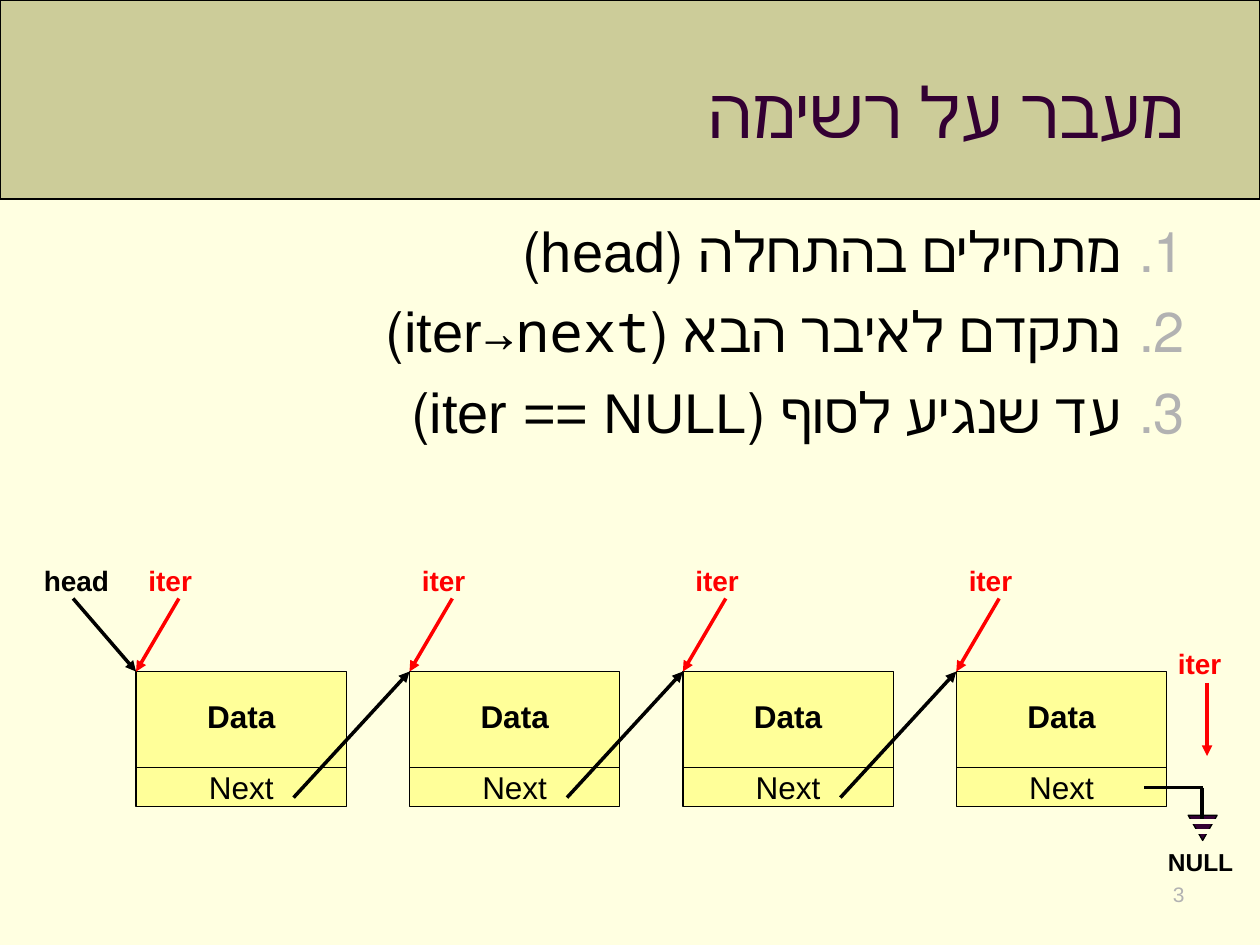
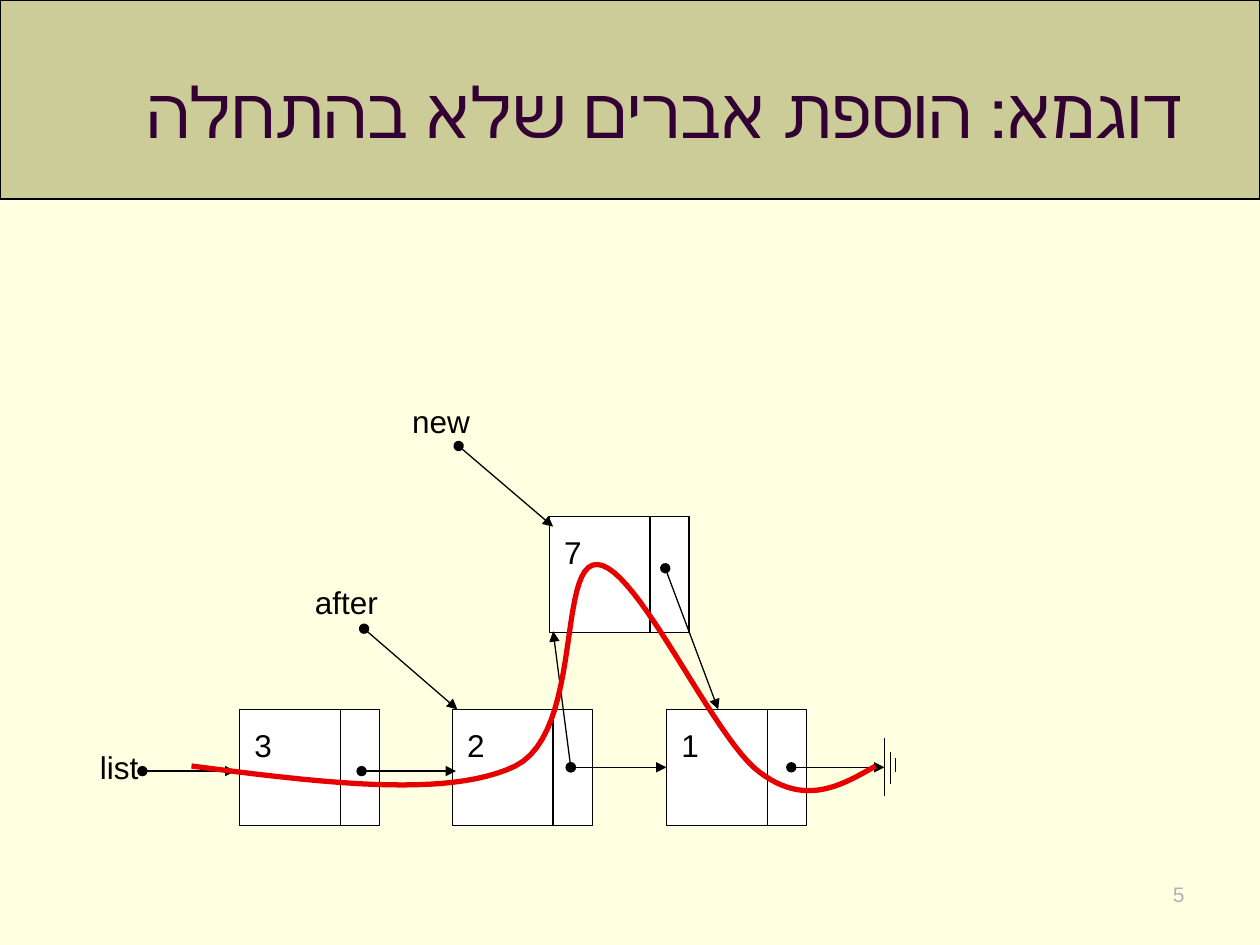
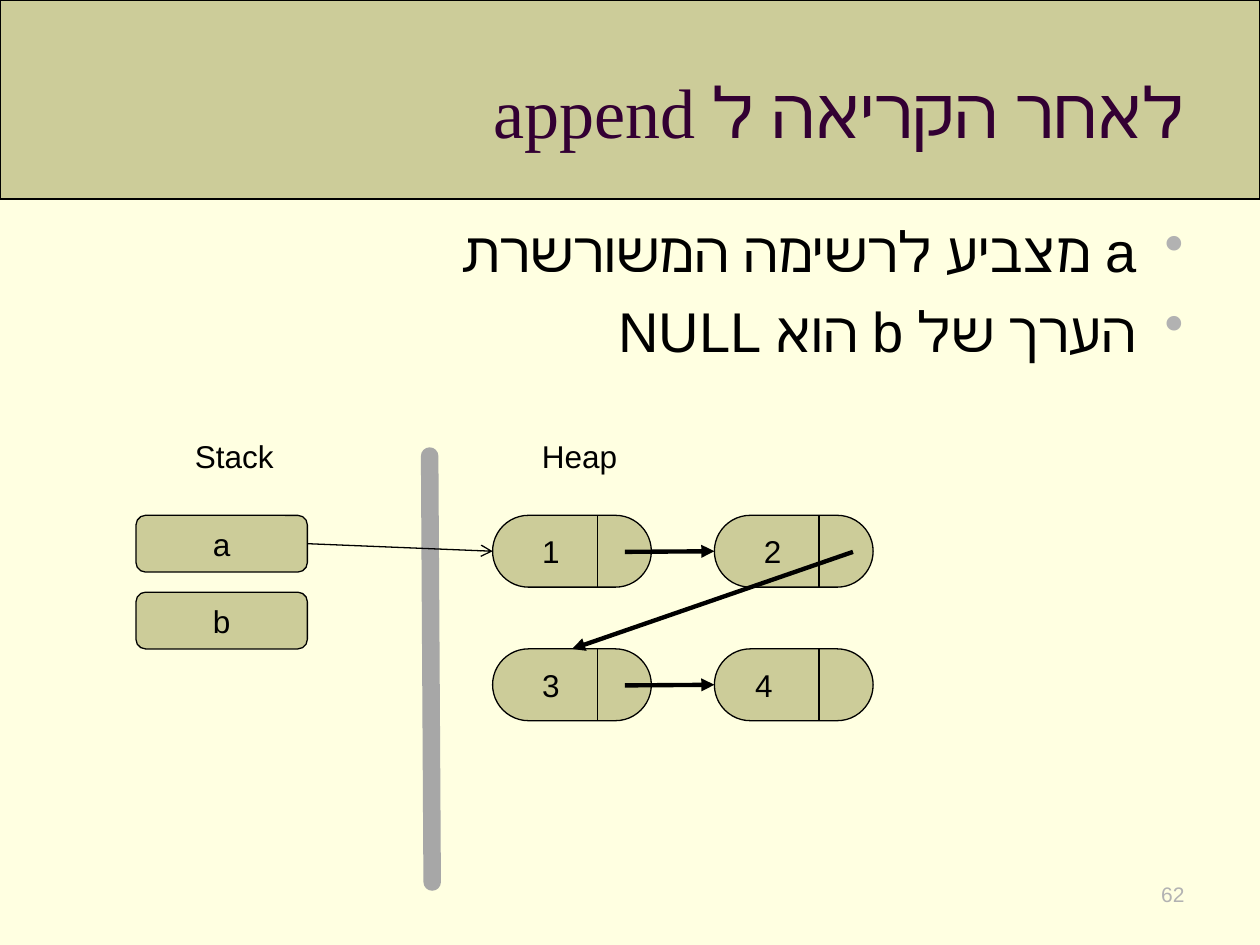
import dataclasses
import typing

import lxml.etree
import pptx
import pptx.dml.color
import pptx.enum.shapes
import pptx.enum.text
import pptx.oxml.ns
import pptx.util

CREAM = pptx.dml.color.RGBColor(0xFF, 0xFF, 0xE1)
KHAKI = pptx.dml.color.RGBColor(0xCC, 0xCC, 0x99)
YELLOW = pptx.dml.color.RGBColor(0xFF, 0xFF, 0x99)
PLUM = pptx.dml.color.RGBColor(0x33, 0x00, 0x33)
BLACK = pptx.dml.color.RGBColor(0x00, 0x00, 0x00)
WHITE = pptx.dml.color.RGBColor(0xFF, 0xFF, 0xFF)
RED = pptx.dml.color.RGBColor(0xFF, 0x00, 0x00)
CURVE_RED = pptx.dml.color.RGBColor(0xE7, 0x00, 0x00)
BAR_GRAY = pptx.dml.color.RGBColor(0xA7, 0xA7, 0xA7)
PALE_GRAY = pptx.dml.color.RGBColor(0xB2, 0xB2, 0xB2)

LEFT = pptx.enum.text.PP_ALIGN.LEFT
CENTER = pptx.enum.text.PP_ALIGN.CENTER
RIGHT = pptx.enum.text.PP_ALIGN.RIGHT
TOP = pptx.enum.text.MSO_ANCHOR.TOP
MIDDLE = pptx.enum.text.MSO_ANCHOR.MIDDLE
RECTANGLE = pptx.enum.shapes.MSO_SHAPE.RECTANGLE
ROUNDED = pptx.enum.shapes.MSO_SHAPE.ROUNDED_RECTANGLE
TRIANGLE = pptx.enum.shapes.MSO_SHAPE.ISOSCELES_TRIANGLE
STRAIGHT = pptx.enum.shapes.MSO_CONNECTOR.STRAIGHT

LEFT_SIDE, RIGHT_SIDE, TOP_SIDE = 1, 3, 0
TITLE_ONLY_LAYOUT = 5

Point = tuple[float, float]


class Box(typing.NamedTuple):
    left: float
    top: float
    width: float
    height: float

    def lengths(self) -> list[pptx.util.Length]:
        return [pptx.util.Inches(value) for value in self]


@dataclasses.dataclass(frozen=True)
class TextStyle:
    size: float = 18
    color: pptx.dml.color.RGBColor = BLACK
    name: str = "Arial"
    bold: bool = False
    alignment: pptx.enum.text.PP_ALIGN = LEFT
    anchor: pptx.enum.text.MSO_ANCHOR = TOP


@dataclasses.dataclass(frozen=True)
class LineStyle:
    width: float = 0.75
    color: pptx.dml.color.RGBColor = BLACK
    head: str = ""
    tail: str = ""
    cap: str = ""


@dataclasses.dataclass(frozen=True)
class ListStyle:
    tag: str
    attribute: str
    mark: str
    indent: float


TITLE = TextStyle(40, PLUM, "Times New Roman", alignment=RIGHT, anchor=MIDDLE)
BODY = TextStyle(32, alignment=RIGHT)
PAGE_NUMBER = TextStyle(12, PALE_GRAY, alignment=RIGHT)
PLAIN = TextStyle()
CENTERED = TextStyle(alignment=CENTER)
SHAPE_TEXT = TextStyle(alignment=CENTER, anchor=MIDDLE)
CELL_TEXT = TextStyle(anchor=MIDDLE)
DATA = TextStyle(bold=True, alignment=CENTER)
HEAD_LABEL = TextStyle(16, bold=True)
ITER_LABEL = TextStyle(16, RED, bold=True)
NULL_LABEL = TextStyle(14, bold=True)

THIN = LineStyle()
GROUND = LineStyle(2)
LINK = LineStyle(2, tail="triangle")
ITER_LINK = LineStyle(2, RED, tail="triangle")
STRIPE = LineStyle(3, CREAM)
POINTER = LineStyle(head="oval", tail="triangle")
REFERENCE = LineStyle(tail="arrow")
THICK_LINK = LineStyle(2.5, tail="triangle")
DIVIDER = LineStyle(10, BAR_GRAY, cap="rnd")

NUMBERED = ListStyle("a:buAutoNum", "type", "arabicPeriod", 0.5)
BULLETED = ListStyle("a:buChar", "char", "•", 0.38)


def set_format(target: typing.Any, values: dict[str, typing.Any]) -> None:
    for name, value in values.items():
        setattr(target, name, value)


def add_child(parent: typing.Any, tag: str, **attributes: str) -> typing.Any:
    return lxml.etree.SubElement(parent, pptx.oxml.ns.qn(tag), attributes)


def add_run(paragraph: typing.Any, text: str, style: TextStyle) -> None:
    run = paragraph.add_run()
    run.text = text
    set_format(run.font, {"size": pptx.util.Pt(style.size), "name": style.name, "bold": style.bold})
    run.font.color.rgb = style.color


def write(shape: typing.Any, text: str, style: TextStyle, right_to_left: bool = False) -> None:
    frame = shape.text_frame
    set_format(frame, {"word_wrap": True, "vertical_anchor": style.anchor,
                       "auto_size": pptx.enum.text.MSO_AUTO_SIZE.NONE})
    paragraph = frame.paragraphs[0]
    paragraph.alignment = style.alignment
    if right_to_left:
        paragraph._p.get_or_add_pPr().set("rtl", "1")
    add_run(paragraph, text, style)


def add_label(shapes: typing.Any, box: Box, text: str, style: TextStyle) -> None:
    write(shapes.add_textbox(*box.lengths()), text, style)


def add_outlined(shapes: typing.Any, kind: typing.Any, box: Box,
                 color: pptx.dml.color.RGBColor) -> typing.Any:
    shape = shapes.add_shape(kind, *box.lengths())
    shape.shadow.inherit = False
    shape.fill.solid()
    shape.fill.fore_color.rgb = color
    shape.line.color.rgb = BLACK
    shape.line.width = pptx.util.Pt(THIN.width)
    return shape


def add_line(shapes: typing.Any, start: Point, end: Point, style: LineStyle = THIN) -> typing.Any:
    connector = shapes.add_connector(STRAIGHT, *(pptx.util.Inches(value) for value in start + end))
    connector.line.color.rgb = style.color
    connector.line.width = pptx.util.Pt(style.width)
    properties = connector.element.find(pptx.oxml.ns.qn("p:spPr"))
    outline = properties.find(pptx.oxml.ns.qn("a:ln"))
    if style.cap:
        outline.set("cap", style.cap)
    for tag, arrowhead in (("a:headEnd", style.head), ("a:tailEnd", style.tail)):
        if arrowhead:
            add_child(outline, tag, type=arrowhead)
    add_child(properties, "a:effectLst")
    return connector


def add_list(slide: typing.Any, items: list[list[tuple[str, str]]], style: ListStyle) -> None:
    """Write right-to-left items, each a list of (text, font name) runs."""
    frame = slide.shapes.add_textbox(*Box(0.5, 1.67, 9, 5.33).lengths()).text_frame
    frame.word_wrap = True
    for index, runs in enumerate(items):
        paragraph = frame.add_paragraph() if index else frame.paragraphs[0]
        set_format(paragraph, {"alignment": RIGHT, "space_before": pptx.util.Pt(7.5)})
        properties = paragraph._p.get_or_add_pPr()
        indent = pptx.util.Inches(style.indent)
        for name, value in {"marL": indent, "indent": -indent, "rtl": 1}.items():
            properties.set(name, str(value))
        add_child(add_child(properties, "a:buClr"), "a:srgbClr", val=str(PALE_GRAY))
        add_child(properties, style.tag, **{style.attribute: style.mark})
        for text, font_name in runs:
            add_run(paragraph, text, dataclasses.replace(BODY, name=font_name))


def add_slide(presentation: typing.Any, title: str, number: str) -> typing.Any:
    slide = presentation.slides.add_slide(presentation.slide_layouts[TITLE_ONLY_LAYOUT])
    placeholder = slide.shapes.title
    names = ("left", "top", "width", "height")
    set_format(placeholder, dict(zip(names, Box(0.5, 0.25, 9, 1.25).lengths())))
    write(placeholder, title, TITLE, right_to_left=True)
    add_label(slide.shapes, Box(7.17, 6.95, 2.33, 0.4), number, PAGE_NUMBER)
    return slide


def set_master(presentation: typing.Any, slide: typing.Any) -> None:
    """Give the master its background and the title band, drawn on a slide first."""
    master = presentation.slide_master
    master.background.fill.solid()
    master.background.fill.fore_color.rgb = CREAM
    band = add_outlined(slide.shapes, RECTANGLE, Box(0, 0, 10, 1.58), KHAKI)
    master.shapes.element.insert(2, band.element)


def add_data_node(slide: typing.Any, left: float) -> None:
    shapes = slide.shapes.add_group_shape().shapes
    add_outlined(shapes, RECTANGLE, Box(left, 5.33, 1.67, 1.07), YELLOW)
    add_line(shapes, (left, 6.09), (left + 1.67, 6.09))
    add_label(shapes, Box(left, 5.48, 1.67, 0.36), "Data", DATA)
    add_label(shapes, Box(left, 6.05, 1.67, 0.36), "Next", CENTERED)


def add_null_sign(slide: typing.Any) -> None:
    shapes = slide.shapes.add_group_shape().shapes
    add_label(shapes, Box(9.17, 6.67, 0.75, 0.33), "NULL", NULL_LABEL)
    add_outlined(shapes, TRIANGLE, Box(9.43, 6.47, 0.23, 0.2), PLUM).rotation = 180
    for top in (6.6, 6.52):
        add_line(shapes, (9.42, top), (9.67, top), STRIPE)
    add_line(shapes, (9.08, 6.25), (9.55, 6.25), GROUND)
    add_line(shapes, (9.54, 6.25), (9.54, 6.5), GROUND)


def build_traversal(slide: typing.Any) -> None:
    add_list(slide, [
        [("מתחילים בהתחלה (head)", "Arial")],
        [("נתקדם לאיבר הבא (iter", "Arial"), ("→next", "Noto Sans Mono"), (")", "Arial")],
        [("עד שנגיע לסוף (iter == NULL)", "Arial")],
    ], NUMBERED)
    pitch = 2.17
    lefts = [1.08 + pitch * index for index in range(4)]
    for left in lefts:
        add_data_node(slide, left)
        add_line(slide.shapes, (left + 0.34, 4.75), (left, 5.33), ITER_LINK)
        add_label(slide.shapes, Box(left, 4.42, 0.75, 0.37), "iter", ITER_LABEL)
    for left in lefts[:-1]:
        add_line(slide.shapes, (left + 1.25, 6.33), (left + pitch, 5.33), LINK)
    add_label(slide.shapes, Box(0.25, 4.42, 0.75, 0.37), "head", HEAD_LABEL)
    add_line(slide.shapes, (0.58, 4.75), (lefts[0], 5.33), LINK)
    add_null_sign(slide)
    add_line(slide.shapes, (9.58, 5.42), (9.58, 6), ITER_LINK)
    add_label(slide.shapes, Box(9.25, 5.08, 0.58, 0.37), "iter", ITER_LABEL)


def add_number_node(slide: typing.Any, left: float, top: float, text: str) -> typing.Any:
    shapes = slide.shapes.add_group_shape().shapes
    cell = add_outlined(shapes, RECTANGLE, Box(left, top, 1.11, 0.92), WHITE)
    add_line(shapes, (left + 0.8, top), (left + 0.8, top + 0.92))
    add_label(shapes, Box(left + 0.02, top + 0.08, 1.33, 0.4), text, PLAIN)
    return cell


def bezier_point(points: list[Point], t: float) -> Point:
    weights = ((1 - t) ** 3, 3 * t * (1 - t) ** 2, 3 * t * t * (1 - t), t ** 3)
    x, y = (sum(weight * point[axis] for weight, point in zip(weights, points)) for axis in (0, 1))
    return x, y


def add_route(slide: typing.Any) -> None:
    """Draw the smooth path through the list after the insertion."""
    controls = [(1.52, 6.08), (2.54, 6.21), (3.55, 6.34), (4.09, 6.08), (4.63, 5.81),
                (4.42, 4.47), (4.74, 4.48), (5.06, 4.49), (5.66, 5.86), (6.03, 6.13),
                (6.39, 6.4), (6.67, 6.24), (6.95, 6.08)]
    steps = 24
    points = [bezier_point(controls[first:first + 4], step / steps)
              for first in range(0, len(controls) - 1, 3) for step in range(1, steps + 1)]
    start, *others = [(pptx.util.Inches(x), pptx.util.Inches(y)) for x, y in controls[:1] + points]
    builder = slide.shapes.build_freeform(*start)
    builder.add_line_segments(others, close=False)
    route = builder.convert_to_shape()
    route.shadow.inherit = False
    route.fill.background()
    route.line.color.rgb = CURVE_RED
    route.line.width = pptx.util.Pt(3)


def build_insertion(slide: typing.Any) -> None:
    shapes = slide.shapes
    for x, top, bottom in ((7.02, 5.86, 6.32), (7.07, 5.97, 6.22), (7.11, 6.02, 6.13)):
        add_line(shapes, (x, top), (x, bottom))
    nodes = {text: add_number_node(slide, left, top, text) for text, left, top in (
        ("1", 5.29, 5.63), ("2", 3.59, 5.63), ("3", 1.9, 5.63), ("7", 4.36, 4.1))}
    for text, box in (("list", Box(0.67, 5.89, 0.55, 0.4)),
                      ("after", Box(2.35, 4.58, 0.8, 0.4)),
                      ("new", Box(3.1, 3.14, 0.8, 0.4))):
        add_label(shapes, box, text, CENTERED)
    for start, end in (((6.28, 6.09), (7.02, 6.09)), ((2.87, 6.12), (3.62, 6.12)),
                       ((1.13, 6.12), (1.87, 6.12)), ((2.89, 4.99), (3.63, 5.63)),
                       ((3.64, 3.54), (4.39, 4.18)), ((5.28, 4.51), (5.7, 5.63)),
                       ((4.53, 6.09), (4.39, 5.01))):
        add_line(shapes, start, end, POINTER)
    add_line(shapes, (4.53, 6.09), (5.29, 6.09), POINTER).end_connect(nodes["1"], LEFT_SIDE)
    add_route(slide)


def add_heap_node(slide: typing.Any, left: float, top: float, text: str, inset: float) -> typing.Any:
    shapes = slide.shapes.add_group_shape().shapes
    node = add_outlined(shapes, ROUNDED, Box(left, top, 1.26, 0.57), KHAKI)
    node.adjustments[0] = 0.5
    write(node, text, CELL_TEXT)
    node.text_frame.margin_left = pptx.util.Inches(inset)
    add_line(shapes, (left + 0.83, top), (left + 0.83, top + 0.57))
    return node


def build_memory(slide: typing.Any) -> None:
    add_list(slide, [[("a מצביע לרשימה המשורשרת", "Arial")],
                     [("הערך של b הוא NULL", "Arial")]], BULLETED)
    shapes = slide.shapes
    add_line(shapes, (3.41, 3.62), (3.43, 7), DIVIDER)
    for text, left in (("Stack", 1.08), ("Heap", 3.82)):
        add_label(shapes, Box(left, 3.42, 1.56, 0.4), text, CENTERED)
    variables = {}
    for text, top in (("a", 4.09), ("b", 4.7)):
        variables[text] = add_outlined(shapes, ROUNDED, Box(1.08, top, 1.36, 0.45), KHAKI)
        write(variables[text], text, SHAPE_TEXT)
    nodes = {text: add_heap_node(slide, left, top, text, inset) for text, left, top, inset in (
        ("1", 3.91, 4.09, 0.31), ("2", 5.67, 4.09, 0.31),
        ("3", 3.91, 5.15, 0.31), ("4", 5.67, 5.15, 0.24))}
    for start, end, target, side in (((4.96, 4.38), (5.67, 4.38), "2", LEFT_SIDE),
                                     ((4.96, 5.44), (5.67, 5.44), "4", LEFT_SIDE),
                                     ((6.77, 4.38), (4.54, 5.15), "3", TOP_SIDE)):
        add_line(shapes, start, end, THICK_LINK).end_connect(nodes[target], side)
    reference = add_line(shapes, (2.44, 4.31), (3.91, 4.38), REFERENCE)
    reference.begin_connect(variables["a"], RIGHT_SIDE)
    reference.end_connect(nodes["1"], LEFT_SIDE)


def main() -> None:
    presentation = pptx.Presentation()
    presentation.slide_width = pptx.util.Inches(10)
    presentation.slide_height = pptx.util.Inches(7.5)
    for title, number, build in (
            ("מעבר על רשימה", "3", build_traversal),
            ("דוגמא: הוספת אברים שלא בהתחלה", "5", build_insertion),
            ("לאחר הקריאה ל append", "62", build_memory)):
        build(add_slide(presentation, title, number))
    set_master(presentation, presentation.slides[0])
    presentation.save("out.pptx")


if __name__ == "__main__":
    main()
